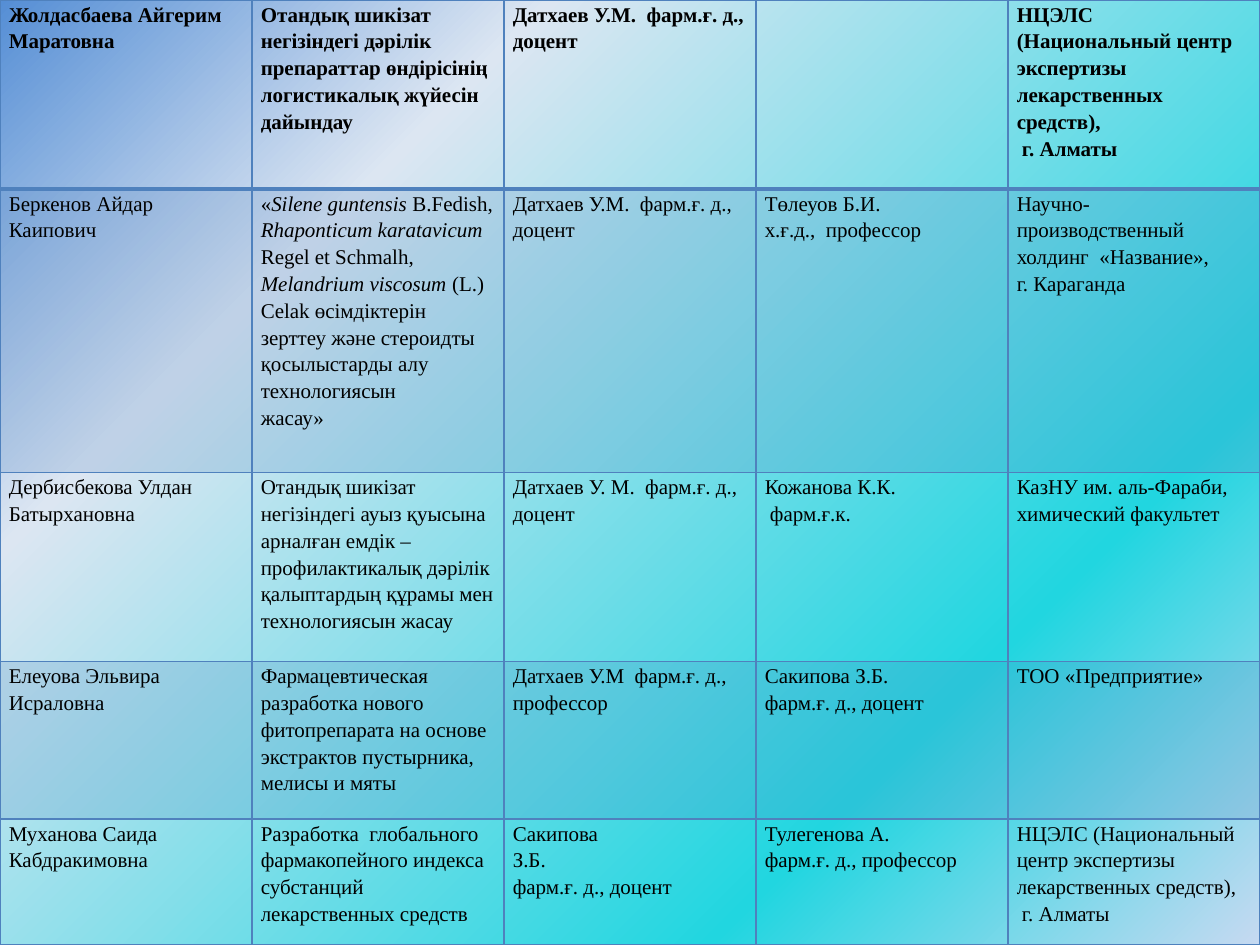
from lxml.etree import SubElement
from pptx import Presentation
from pptx.dml.color import RGBColor
from pptx.oxml.ns import qn
from pptx.util import Inches, Pt

BLUE = "4F81BD"
FONT = {"name": "Times New Roman", "size": Pt(12)}
MARGINS = {"margin_left": Inches(0.07), "margin_right": Inches(0.07),
           "margin_top": 0, "margin_bottom": 0}
GRADIENT = [(0, "C6D9F1"), (25, "21D6E0"), (75, "DCE6F2"), (100, "558ED5")]
ROW_HEIGHTS = [1.5, 2.25, 1.5, 1.25, 1]
CENTRE = "НЦЭЛС (Национальный центр экспертизы лекарственных средств),\n г. Алматы"

# A line break starts a paragraph; asterisks enclose italics.
ROWS = [
    ["Жолдасбаева Айгерим Маратовна",
     "Отандық шикізат негізіндегі дәрілік препараттар өндірісінің "
     "логистикалық жүйесін дайындау",
     "Датхаев У.М.  фарм.ғ. д., доцент", "", CENTRE],
    ["Беркенов Айдар Каипович",
     "«*Silene guntensis* B.Fedish, *Rhaponticum karatavicum* Regel et Schmalh, "
     "*Melandrium viscosum* (L.) Celak өсімдіктерін зерттеу және стероидты "
     "қосылыстарды алу технологиясын\nжасау»",
     "Датхаев У.М.  фарм.ғ. д., доцент",
     "Төлеуов Б.И.\nх.ғ.д.,  профессор",
     "Научно-производственный холдинг  «Название»,\nг. Караганда"],
    ["Дербисбекова Улдан Батырхановна",
     "Отандық шикізат негізіндегі ауыз қуысына арналған емдік – "
     "профилактикалық дәрілік қалыптардың құрамы мен технологиясын жасау",
     "Датхаев У. М.  фарм.ғ. д., доцент",
     "Кожанова К.К.\n фарм.ғ.к.",
     "КазНУ им. аль-Фараби, химический факультет"],
    ["Елеуова Эльвира Исраловна",
     "Фармацевтическая разработка нового фитопрепарата на основе экстрактов "
     "пустырника, мелисы и мяты",
     "Датхаев У.М  фарм.ғ. д., профессор",
     "Сакипова З.Б.\nфарм.ғ. д., доцент",
     "ТОО «Предприятие»"],
    ["Муханова Саида Кабдракимовна",
     "Разработка  глобального фармакопейного индекса субстанций "
     "лекарственных средств",
     "Сакипова\nЗ.Б.\nфарм.ғ. д., доцент",
     "Тулегенова А.\nфарм.ғ. д., профессор", CENTRE],
]


def rgb(code):
    return RGBColor.from_string(code)


def set_attrs(obj, values):
    for name, value in values.items():
        setattr(obj, name, value)


def add_color(parent, code):
    return SubElement(parent, qn("a:srgbClr"), val=code)


def set_background(slide):
    """Radial gradient centred on the bottom right corner."""
    slide.background.fill.gradient()
    grad = slide._element.find(".//" + qn("a:gradFill"))
    for child in list(grad):
        grad.remove(child)
    stops = SubElement(grad, qn("a:gsLst"))
    for pos, code in GRADIENT:
        add_color(SubElement(stops, qn("a:gs"), pos=str(pos * 1000)), code)
    radial = SubElement(grad, qn("a:path"), path="circle")
    SubElement(radial, qn("a:fillToRect"), l="100000", t="100000")


def write_text(cell, text, bold):
    tf = cell.text_frame
    for i, line in enumerate(text.split("\n")):
        p = tf.paragraphs[0] if i == 0 else tf.add_paragraph()
        p.line_spacing = 1.15
        for j, part in enumerate(line.split("*")):
            if part:
                r = p.add_run()
                r.text = part
                set_attrs(r.font, {**FONT, "bold": bold, "italic": j % 2 == 1})
                r.font.color.rgb = rgb("000000")


def fill_cell(cell, tinted):
    if not tinted:
        cell.fill.background()
        return
    cell.fill.solid()
    cell.fill.fore_color.rgb = rgb(BLUE)
    color = cell._tc.tcPr.find(".//" + qn("a:srgbClr"))
    SubElement(color, qn("a:alpha"), val="20000")


def add_borders(cell, widths):
    tc_pr = cell._tc.get_or_add_tcPr()
    for i, (side, width) in enumerate(widths.items()):
        ln = SubElement(tc_pr, qn("a:ln" + side), w=str(Pt(width)))
        add_color(SubElement(ln, qn("a:solidFill")), BLUE)
        tc_pr.insert(i, ln)  # borders come before the fill


def add_project_table(slide, width):
    shape = slide.shapes.add_table(len(ROWS), len(ROWS[0]), 0, 0, width,
                                   Inches(sum(ROW_HEIGHTS)))
    table = shape.table
    set_attrs(table, {"first_row": False, "horz_banding": False})
    for i, (texts, height) in enumerate(zip(ROWS, ROW_HEIGHTS)):
        table.rows[i].height = Inches(height)
        widths = {"L": 1, "R": 1, "T": 2 if i == 1 else 1, "B": 2 if i == 0 else 1}
        for j, text in enumerate(texts):
            cell = table.cell(i, j)
            set_attrs(cell, MARGINS)
            write_text(cell, text, bold=i == 0)
            fill_cell(cell, tinted=i % 2 == 1)
            add_borders(cell, widths)


def main():
    prs = Presentation()
    set_attrs(prs, {"slide_width": Inches(10), "slide_height": Inches(7.5)})
    slide = prs.slides.add_slide(prs.slide_layouts[6])
    set_background(slide)
    add_project_table(slide, prs.slide_width)
    prs.save("out.pptx")


if __name__ == "__main__":
    main()
